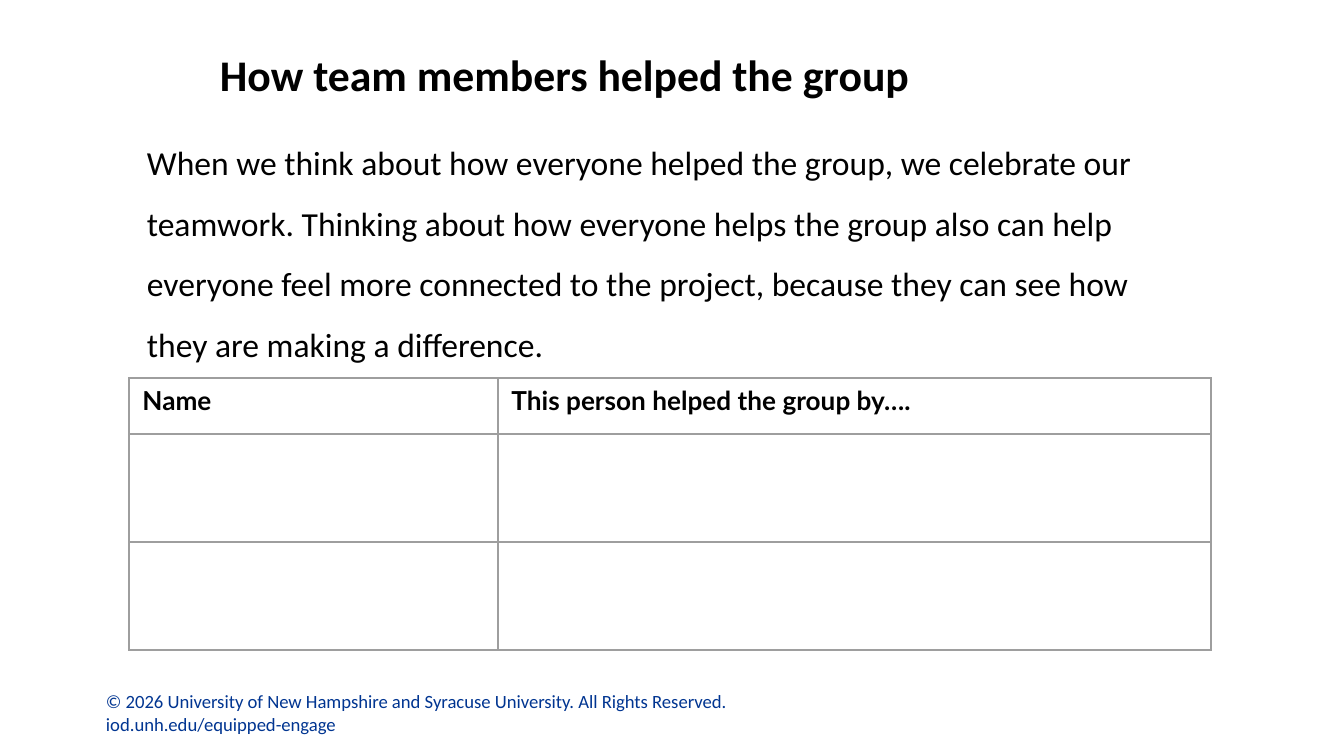
from lxml.etree import SubElement
from pptx import Presentation
from pptx.dml.color import RGBColor
from pptx.oxml.ns import qn
from pptx.util import Pt

EMU_PER_PX = 914400 / 134.4
COLORS = {"ink": "000000", "footer": "013591", "border": "9E9E9E", "page": "FFFFFF"}

PAGE_SIZE = (1344, 756)
TEXTS = [
    {
        "at": (93, 683, 719, 59), "size": 10, "color": "footer", "bold": False,
        "spacing": 1, "inset": (13, 7),
        "lines": [
            "© 2026 University of New Hampshire and Syracuse University. All Rights Reserved.",
            "iod.unh.edu/equipped-engage",
        ],
    },
    {
        "at": (207, 27, 1004, 85), "size": 23.4, "color": "ink", "bold": True,
        "spacing": 1.15, "inset": (13, 13),
        "lines": ["How team members helped the group"],
    },
    {
        "at": (134, 109, 1066, 257), "size": 18, "color": "ink", "bold": False,
        "spacing": 1.5, "inset": (13, 13),
        "lines": [
            "When we think about how everyone helped the group, we celebrate our teamwork. "
            "Thinking about how everyone helps the group also can help everyone feel more "
            "connected to the project, because they can see how they are making a difference."
        ],
    },
]
TABLE_ORIGIN = (129, 378)
COLUMN_WIDTHS = [369, 713]
ROW_HEIGHTS = [56, 108, 108]
TABLE_ROWS = [
    ["Name", "This person helped the group by…."],
    ["", ""],
    ["", ""],
]


def px(length):
    return round(length * EMU_PER_PX)


def rgb(name):
    return RGBColor.from_string(COLORS[name])


def add_span(para, text, font, size, color, bold):
    span = para.add_run()
    span.text = text
    span.font.name = font
    span.font.size = Pt(size)
    span.font.bold = bold
    span.font.color.rgb = rgb(color)


def add_text(page, item):
    box = page.shapes.add_textbox(*map(px, item["at"]))
    frame = box.text_frame
    frame.word_wrap = True
    side, top = map(px, item["inset"])
    frame.margin_left = frame.margin_right = side
    frame.margin_top = frame.margin_bottom = top
    para = frame.paragraphs[0]
    para.line_spacing = item["spacing"]
    for index, line in enumerate(item["lines"]):
        if index:
            para.add_line_break()
        add_span(para, line, "Calibri", item["size"], item["color"], item["bold"])


def add_borders(cell):
    properties = cell._tc.get_or_add_tcPr()
    for side in ("lnL", "lnR", "lnT", "lnB"):
        line = SubElement(properties, qn(f"a:{side}"), w=str(Pt(0.75)))
        fill = SubElement(line, qn("a:solidFill"))
        SubElement(fill, qn("a:srgbClr"), val=COLORS["border"])


def add_help_table(page):
    size = (sum(COLUMN_WIDTHS), sum(ROW_HEIGHTS))
    table = page.shapes.add_table(
        len(ROW_HEIGHTS), len(COLUMN_WIDTHS), *map(px, TABLE_ORIGIN + size)
    ).table
    table.horz_banding = False
    for column, width in zip(table.columns, COLUMN_WIDTHS):
        column.width = px(width)
    for row, height, texts in zip(table.rows, ROW_HEIGHTS, TABLE_ROWS):
        row.height = px(height)
        for cell, text in zip(row.cells, texts):
            add_borders(cell)
            cell.fill.background()
            if text:
                add_span(cell.text_frame.paragraphs[0], text, "Lato", 14, "ink", True)


deck = Presentation()
deck.slide_width, deck.slide_height = map(px, PAGE_SIZE)
page = deck.slides.add_slide(deck.slide_layouts[6])
page.background.fill.solid()
page.background.fill.fore_color.rgb = rgb("page")
for item in TEXTS:
    add_text(page, item)
add_help_table(page)
deck.save("out.pptx")
